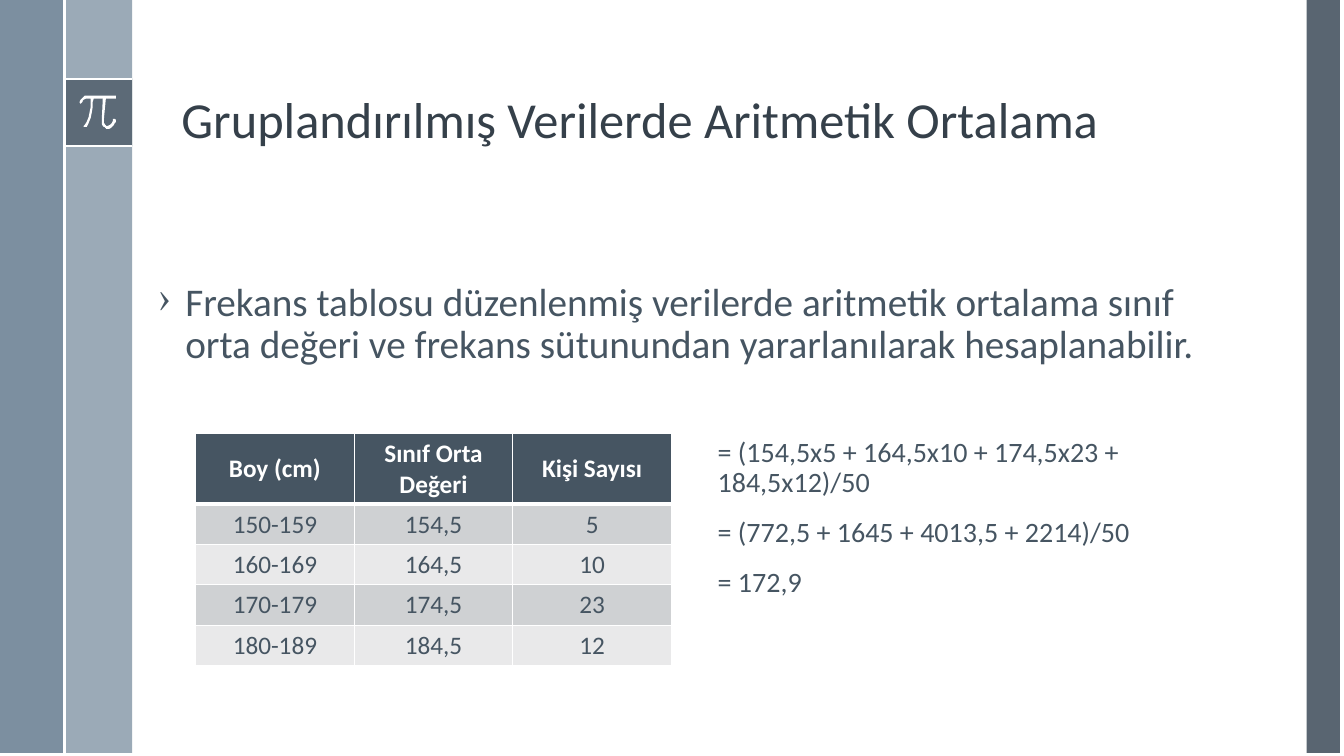
from lxml.etree import SubElement
from pptx import Presentation
from pptx.dml.color import RGBColor
from pptx.enum.shapes import MSO_CONNECTOR as Connector, MSO_SHAPE as Shape
from pptx.enum.text import MSO_ANCHOR as Anchor, MSO_AUTO_SIZE as AutoSize, PP_ALIGN as Align
from pptx.oxml.ns import qn
from pptx.util import Inches, Pt

COLORS = {
    "title": "35404A", "text": "465562", "white": "FFFFFF", "dark": "475562",
    "outer_band": "6A8093", "inner_band": "9BAAB7", "odd_row": "CFD1D3", "even_row": "E9E9EA",
}
FONT = "Calibri"
ROWS = [
    ("Boy (cm)", "Sınıf Orta Değeri", "Kişi Sayısı"),
    ("150-159", "154,5", "5"),
    ("160-169", "164,5", "10"),
    ("170-179", "174,5", "23"),
    ("180-189", "184,5", "12"),
]
STEPS = [
    "= (154,5x5 + 164,5x10 + 174,5x23 + 184,5x12)/50",
    "= (772,5 + 1645 + 4013,5 + 2214)/50",
    "= 172,9",
]
STATEMENT = ("Frekans tablosu düzenlenmiş verilerde aritmetik ortalama sınıf "
             "orta değeri ve frekans sütunundan yararlanılarak hesaplanabilir.")
PI_START = (35, 0)
PI_OUTLINE = [
    [(7, 0)], [(2, 0), (0, 6), (0, 6)], [(0, 7), (0, 7), (1, 8)], [(2, 7)],
    [(2, 7), (4, 3), (7, 3)], [(11, 3)], [(11, 8), (10, 24), (5, 29)],
    [(4, 30), (4, 31), (5, 31)], [(7, 31)], [(12, 25), (13, 8), (14, 3)],
    [(23, 3)], [(22, 24)], [(22, 24), (21, 29), (24, 31)],
    [(25, 32), (26, 33), (28, 33)], [(29, 33)], [(34, 32), (36, 25), (36, 25)],
    [(36, 24), (35, 23), (35, 23)], [(34, 23), (33, 23), (33, 24)],
    [(33, 24), (32, 29), (28, 30)], [(27, 30), (26, 30), (25, 29)],
    [(24, 28), (24, 25), (24, 24)], [(26, 3)], [(35, 3)],
    [(36, 3), (36, 3), (36, 2)], [(36, 1), (36, 0), (35, 0)],
]


def rgb(name):
    """Return the named colour."""
    return RGBColor.from_string(COLORS[name])


def paint(shape, color, opacity=100):
    """Give a shape a plain fill without outline or shadow."""
    shape.shadow.inherit = False
    shape.line.fill.background()
    shape.fill.solid()
    shape.fill.fore_color.rgb = rgb(color)
    if opacity < 100:
        value = shape.fill._xPr.find(qn("a:solidFill"))[0]
        SubElement(value, qn("a:alpha"), val=str(opacity * 1000))


def add_band(page, box, color, opacity=100):
    """Add a plain rectangle."""
    paint(page.shapes.add_shape(Shape.RECTANGLE, *map(Inches, box)), color, opacity)


def add_rule(page, start, end):
    """Add a thin white line."""
    rule = page.shapes.add_connector(Connector.STRAIGHT, *map(Inches, start + end))
    rule.line.color.rgb = rgb("white")
    rule.line.width = Pt(1.5)
    SubElement(rule._element.spPr, qn("a:effectLst"))


def curve_points(start, controls, steps=6):
    """Return the points along one cubic curve."""
    nodes = [start, *controls]
    points = []
    for step in range(1, steps + 1):
        t = step / steps
        weights = ((1 - t) ** 3, 3 * t * (1 - t) ** 2, 3 * t * t * (1 - t), t ** 3)
        points.append(tuple(sum(w * node[axis] for w, node in zip(weights, nodes))
                            for axis in (0, 1)))
    return points


def add_pi(page, left, top):
    """Draw the pi sign, whose outline is in hundredths of an inch."""
    points = [PI_START]
    for segment in PI_OUTLINE:
        points += curve_points(points[-1], segment) if len(segment) == 3 else segment
    builder = page.shapes.build_freeform(*PI_START, scale=Inches(0.01))
    builder.add_line_segments(points[1:], close=True)
    paint(builder.convert_to_shape(Inches(left), Inches(top)), "white")


def add_frame(page, top, height):
    """Draw the side bands and the pi emblem."""
    left, size, emblem_top = 0.64, 0.67, 0.78
    add_band(page, (12.96, top, 0.33, height), "dark", 90)
    add_band(page, (left, top, size, height), "inner_band")
    add_band(page, (-0.04, top, size, height), "outer_band", 88)
    add_band(page, (left, emblem_top, size, size), "dark", 75)
    for edge in (emblem_top, emblem_top + size):
        add_rule(page, (left, edge), (left + size, edge))
    add_pi(page, left + 0.15, emblem_top + 0.17)
    add_rule(page, (left, top), (left, top + height))


def style(para, size, color, bold=False):
    """Set the font of a paragraph."""
    para.font.name = FONT
    para.font.size = Pt(size)
    para.font.bold = bold
    para.font.color.rgb = rgb(color)


def set_title(page, box, text):
    """Place and format the title."""
    title = page.shapes.title
    title.left, title.top, title.width, title.height = map(Inches, box)
    frame = title.text_frame
    frame.text = text
    frame.word_wrap = True
    frame.auto_size = AutoSize.NONE
    frame.vertical_anchor = Anchor.BOTTOM
    para = frame.paragraphs[0]
    para.alignment = Align.LEFT
    para.line_spacing = 0.9
    style(para, 36, "title")


def add_text(page, box, lines, size, bullet=None):
    """Add a text box with one paragraph for each line."""
    frame = page.shapes.add_textbox(*map(Inches, box)).text_frame
    frame.word_wrap = True
    frame.text = "\n".join(lines)
    for para in frame.paragraphs:
        para.line_spacing = 0.9
        para.space_before = Pt(14)
        style(para, size, "text")
        if bullet:
            props = para._p.get_or_add_pPr()
            props.set("marL", str(Inches(0.27)))
            props.set("indent", str(Inches(-0.27)))
            mark = props.makeelement(qn("a:buChar"), {"char": bullet})
            props.find(qn("a:defRPr")).addprevious(mark)


def add_borders(cell, top, bottom):
    """Give a cell white borders."""
    props = cell._tc.get_or_add_tcPr()
    for side, width in (("L", 1), ("R", 1), ("T", top), ("B", bottom)):
        line = SubElement(props, qn(f"a:ln{side}"), w=str(Pt(width)))
        SubElement(SubElement(line, qn("a:solidFill")), qn("a:srgbClr"), val=COLORS["white"])


def add_frequency_table(page, box, rows):
    """Add the table with a dark header and banded rows."""
    table = page.shapes.add_table(len(rows), len(rows[0]), *map(Inches, box)).table
    table.first_row = table.horz_banding = False
    for index, values in enumerate(rows):
        header = index == 0
        table.rows[index].height = Inches(0.7 if header else 0.4)
        fill = "text" if header else "odd_row" if index % 2 else "even_row"
        for column, value in enumerate(values):
            cell = table.cell(index, column)
            add_borders(cell, 3 if index == 1 else 1, 3 if header else 1)
            cell.fill.solid()
            cell.fill.fore_color.rgb = rgb(fill)
            cell.vertical_anchor = Anchor.MIDDLE
            cell.text = value
            para = cell.text_frame.paragraphs[0]
            para.alignment = Align.CENTER
            style(para, 18, "white" if header else "text", header)


def main():
    """Build and save the slide."""
    deck = Presentation()
    deck.slide_width, deck.slide_height = Inches(13.33), Inches(7.5)
    page = deck.slides.add_slide(deck.slide_layouts[5])
    add_frame(page, -0.03, 7.5)
    set_title(page, (1.7, 0.17, 10.7, 1.36), "Gruplandırılmış Verilerde Aritmetik Ortalama")
    add_text(page, (1.47, 2.75, 10.97, 4), [STATEMENT], 28, "›")
    add_frequency_table(page, (1.94, 4.3, 4.72, 2.3), ROWS)
    add_text(page, (7.02, 4.3, 4.87, 2.3), STEPS, 20)
    deck.save("out.pptx")


if __name__ == "__main__":
    main()
